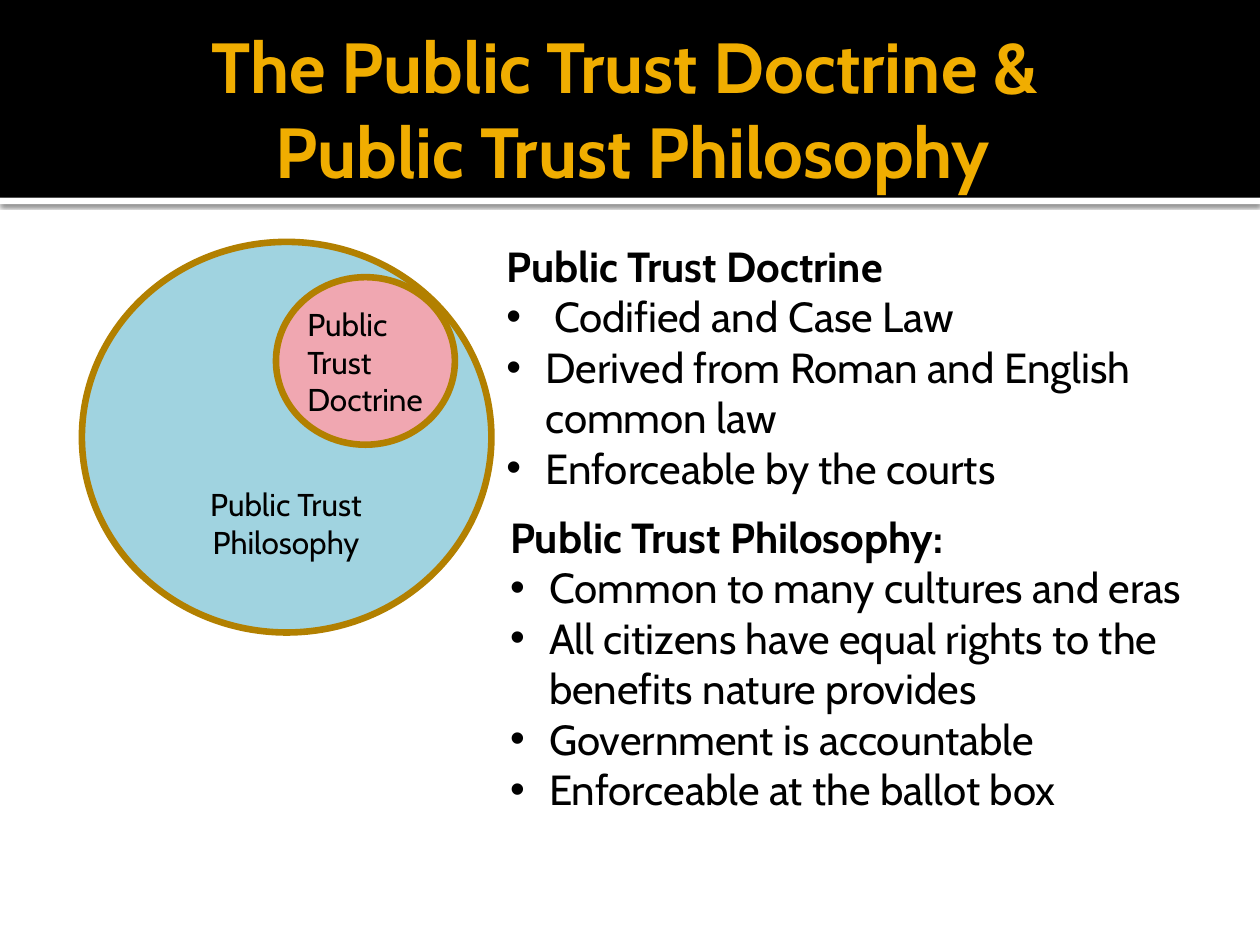
from dataclasses import dataclass

from lxml.etree import SubElement as Sub
from pptx import Presentation as Deck
from pptx.dml.color import RGBColor as Rgb
from pptx.enum.shapes import MSO_SHAPE as Form
from pptx.enum.text import MSO_ANCHOR as Anchor, MSO_AUTO_SIZE as Fit, PP_ALIGN as Align
from pptx.oxml.ns import qn
from pptx.util import Inches, Pt

FONT = "Cabin"
HUES = {
    "black": "000000",
    "white": "FFFFFF",
    "gold": "F0AD00",
    "rim": "B28000",
    "blue": "A0D3E0",
    "pink": "F0A7B1",
}


@dataclass
class Box:
    left: float
    top: float
    width: float
    height: float

    def place(self) -> tuple:
        return tuple(map(Inches, (self.left, self.top, self.width, self.height)))


@dataclass
class Label:
    box: Box
    text: str
    align: Align


@dataclass
class Point:
    text: str
    indent: float = 0.31


@dataclass
class Panel:
    box: Box
    head: str
    points: list


@dataclass
class Solid:
    box: Box
    form: Form
    fill: str
    rim: str = ""


BANDS = [
    Solid(Box(0, 1.57, 10, 0.05), Form.RECTANGLE, "white"),
    Solid(Box(0, 0, 10, 1.57), Form.RECTANGLE, "black"),
]
RINGS = [
    Solid(Box(0.65, 1.92, 3.25, 3.1), Form.OVAL, "blue", "rim"),
    Solid(Box(2.19, 2.2, 1.42, 1.33), Form.OVAL, "pink", "rim"),
]
LABELS = [
    Label(Box(0.98, 3.8, 2.58, 0.4), "Public Trust Philosophy", Align.CENTER),
    Label(Box(2.34, 2.37, 1.25, 1.01), "Public Trust Doctrine", Align.LEFT),
]
PANELS = [
    Panel(Box(3.95, 4.01, 5.67, 2.52), "Public Trust Philosophy:", [
        Point("Common to many cultures and eras"),
        Point("All citizens have equal rights to the benefits nature provides"),
        Point("Government is accountable"),
        Point("Enforceable at the ballot box"),
    ]),
    Panel(Box(3.92, 1.86, 5.5, 2.12), "Public Trust Doctrine", [
        Point("Codified and Case Law", 0.38),
        Point("Derived from Roman and English common law"),
        Point("Enforceable by the courts"),
    ]),
]


def style(para, size: float, hue: str = "black", bold: bool = False) -> None:
    for run in para.runs:
        run.font.name = FONT
        run.font.size = Pt(size)
        run.font.bold = bold
        run.font.color.rgb = Rgb.from_string(HUES[hue])


def draw_solid(slide, item: Solid):
    shape = slide.shapes.add_shape(item.form, *item.box.place())
    shape.shadow.inherit = False
    shape.fill.solid()
    shape.fill.fore_color.rgb = Rgb.from_string(HUES[item.fill])
    if item.rim:
        shape.line.color.rgb = Rgb.from_string(HUES[item.rim])
        shape.line.width = Pt(3.78)
    else:
        shape.line.fill.background()
    return shape


def cast_shade(shape) -> None:
    effects = shape.element.spPr.find(qn("a:effectLst"))
    shade = Sub(effects, qn("a:outerShdw"), blurRad=str(Pt(2.5)), dist=str(Pt(0.8)),
                dir="5400000", algn="t", rotWithShape="0")
    tone = Sub(shade, qn("a:srgbClr"), val=HUES["black"])
    Sub(tone, qn("a:alpha"), val="60000")


def add_frame(slide, box: Box):
    frame = slide.shapes.add_textbox(*box.place()).text_frame
    frame.word_wrap = True
    frame.auto_size = Fit.SHAPE_TO_FIT_TEXT
    return frame


def add_dot(para, indent: float) -> None:
    props = para._p.get_or_add_pPr()
    props.set("marL", str(Inches(indent)))
    props.set("indent", str(-Inches(indent)))
    Sub(props, qn("a:buFont"), typeface="Arial")
    Sub(props, qn("a:buChar"), char="•")


def draw_label(slide, label: Label) -> None:
    frame = add_frame(slide, label.box)
    frame.text = label.text
    para = frame.paragraphs[0]
    para.alignment = label.align
    style(para, 18)


def draw_panel(slide, panel: Panel) -> None:
    frame = add_frame(slide, panel.box)
    frame.text = panel.head
    style(frame.paragraphs[0], 24, bold=True)
    for point in panel.points:
        para = frame.add_paragraph()
        para.text = point.text
        add_dot(para, point.indent)
        style(para, 24)


def draw_title(slide) -> None:
    title = slide.shapes.title
    title.left, title.top, title.width, title.height = Box(0.5, 0.17, 9, 1.37).place()
    frame = title.text_frame
    frame.text = "The Public Trust Doctrine & \vPublic Trust Philosophy"
    frame.word_wrap = True
    frame.auto_size = Fit.NONE
    frame.vertical_anchor = Anchor.MIDDLE
    frame.margin_left = Inches(0.1)
    frame.margin_top = frame.margin_right = frame.margin_bottom = Inches(0.05)
    para = frame.paragraphs[0]
    para.alignment = Align.CENTER
    style(para, 40.5, "gold", True)
    slide.shapes._spTree.append(title.element)


def main() -> None:
    deck = Deck()
    deck.slide_width, deck.slide_height = Inches(10), Inches(7.5)
    slide = deck.slides.add_slide(deck.slide_layouts[5])
    stripe, _ = [draw_solid(slide, band) for band in BANDS]
    cast_shade(stripe)
    draw_title(slide)
    for ring in RINGS:
        draw_solid(slide, ring)
    for label in LABELS:
        draw_label(slide, label)
    for panel in PANELS:
        draw_panel(slide, panel)
    deck.save("out.pptx")


if __name__ == "__main__":
    main()
